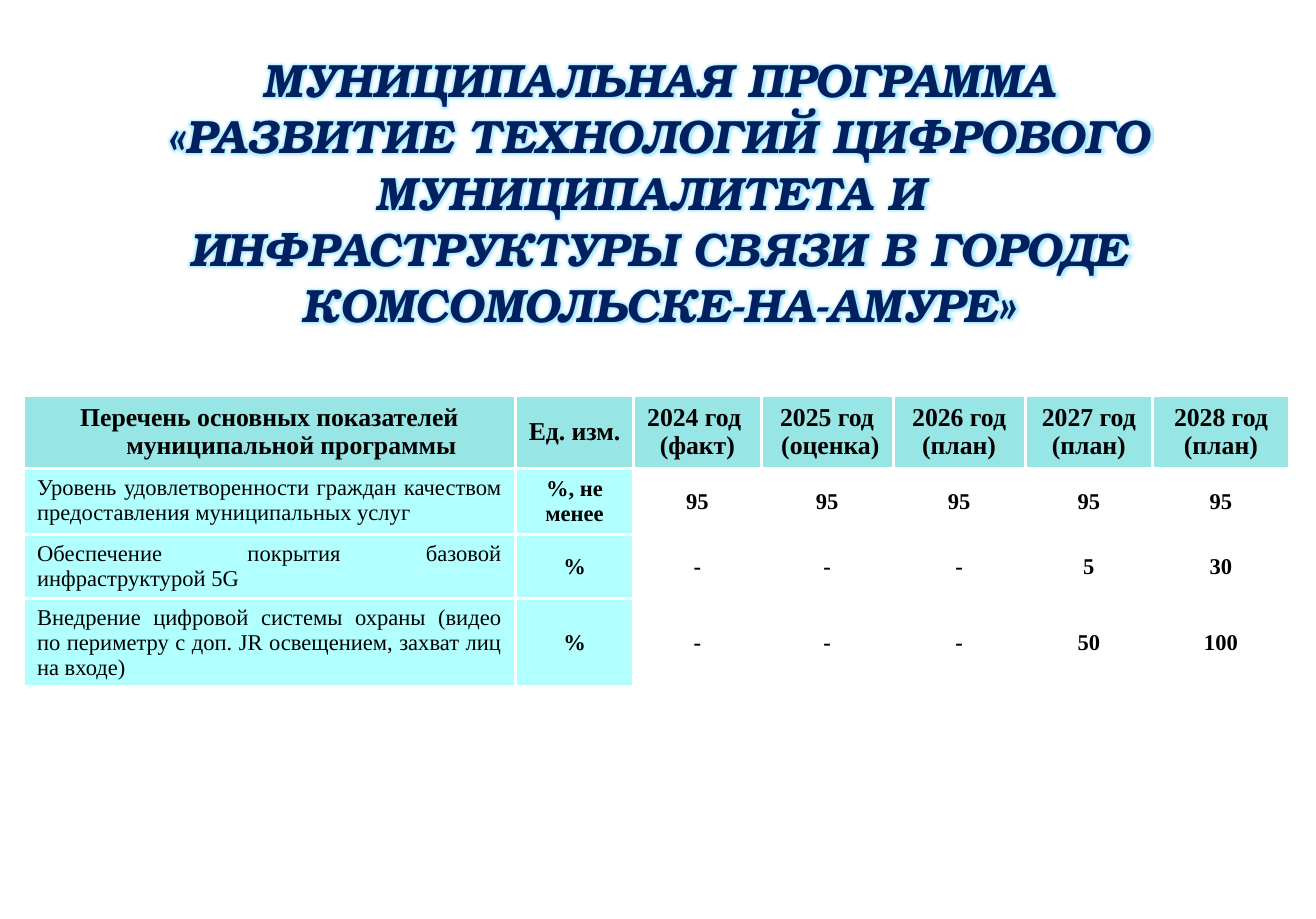
from lxml import etree
from pptx import Presentation
from pptx import util as u
from pptx.dml.color import RGBColor
from pptx.enum import text
from pptx.oxml.ns import qn

NAVY = RGBColor(0x00, 0x20, 0x60)
GLOW = RGBColor(0x33, 0xCC, 0xFF)
TEAL = RGBColor(0x33, 0xCC, 0xCC)
AQUA = RGBColor(0x66, 0xFF, 0xFF)
WHITE = RGBColor(0xFF, 0xFF, 0xFF)
BLACK = RGBColor(0x00, 0x00, 0x00)

CENTER = text.PP_ALIGN.CENTER
JUSTIFY = text.PP_ALIGN.JUSTIFY
TOP = text.MSO_ANCHOR.TOP
MIDDLE = text.MSO_ANCHOR.MIDDLE

SLIDE_SIZE = (11.36, 7.93)
TITLE_BOX = (0.09, 0.27, 11.19, 2.71)
TABLE_BOX = (0.2, 3.41, 10.93, 1.81)
COLUMNS = (4.25, 1.02, 1.1, 1.14, 1.14, 1.1, 1.18)
ROWS = (0.59, 0.56, 0.33, 0.33)
HANGING = 0.38

TITLE = (
    "МУНИЦИПАЛЬНАЯ ПРОГРАММА",
    "«РАЗВИТИЕ ТЕХНОЛОГИЙ ЦИФРОВОГО МУНИЦИПАЛИТЕТА И ",
    "ИНФРАСТРУКТУРЫ СВЯЗИ В ГОРОДЕ КОМСОМОЛЬСКЕ-НА-АМУРЕ»",
)
HEADER = (
    ("Перечень основных показателей муниципальной программы",),
    ("Ед. изм.",),
    ("2024 год ", "(факт)"),
    ("2025 год", " (оценка)"),
    ("2026 год (план)",),
    ("2027 год (план)",),
    ("2028 год (план)",),
)
INDICATORS = (
    ("Уровень удовлетворенности граждан качеством предоставления муниципальных услуг",
     "%, не менее", "95", "95", "95", "95", "95"),
    ("Обеспечение покрытия базовой инфраструктурой 5G",
     "%", "-", "-", "-", "5", "30"),
    ("Внедрение цифровой системы охраны (видео по периметру с доп. JR освещением, "
     "захват лиц на входе)",
     "%", "-", "-", "-", "50", "100"),
)


def add_color(parent, color, alpha=None):
    element = etree.SubElement(parent, qn("a:srgbClr"), val=str(color))
    if alpha is not None:
        etree.SubElement(element, qn("a:alpha"), val=str(alpha * 1000))


def write_paragraphs(frame, lines, font_name, size, color, bold, italic=False,
                     align=CENTER, hanging=0):
    for index, line in enumerate(lines):
        paragraph = frame.add_paragraph() if index else frame.paragraphs[0]
        paragraph.alignment = align
        if hanging:
            properties = paragraph._p.get_or_add_pPr()
            properties.set("marL", str(u.Inches(hanging)))
            properties.set("indent", str(-u.Inches(hanging)))
        run = paragraph.add_run()
        run.text = line
        run.font.name = font_name
        run.font.size = u.Pt(size)
        run.font.bold = bold
        run.font.italic = italic
        run.font.color.rgb = color


def set_margins(target, horizontal, vertical):
    target.margin_left = target.margin_right = u.Inches(horizontal)
    target.margin_top = target.margin_bottom = u.Inches(vertical)


def add_glow(run):
    effects = etree.Element(qn("a:effectLst"))
    glow = etree.SubElement(effects, qn("a:glow"), rad=str(u.Pt(5)))
    add_color(glow, GLOW, 40)
    run._r.get_or_add_rPr().find(qn("a:solidFill")).addnext(effects)


def draw_title(slide, box):
    shape = slide.shapes.add_textbox(*map(u.Inches, box))
    frame = shape.text_frame
    frame.word_wrap = True
    frame.vertical_anchor = text.MSO_ANCHOR.BOTTOM
    set_margins(frame, 0.12, 0.12)
    write_paragraphs(frame, TITLE, "TeX Gyre Bonum", 29, NAVY, True, italic=True)
    for paragraph in frame.paragraphs:
        for run in paragraph.runs:
            add_glow(run)


def style_cell(cell, fill, anchor, margins):
    cell.vertical_anchor = anchor
    set_margins(cell, *margins)
    if fill is None:
        cell.fill.background()
    else:
        cell.fill.solid()
        cell.fill.fore_color.rgb = fill
    properties = cell._tc.get_or_add_tcPr()
    for color in properties.iter(qn("a:srgbClr")):
        etree.SubElement(color, qn("a:alpha"), val="50000")
    for index, side in enumerate(("lnL", "lnR", "lnT", "lnB")):
        line = etree.Element(qn("a:" + side), w=str(u.Pt(2.25)))
        add_color(etree.SubElement(line, qn("a:solidFill")), WHITE)
        properties.insert(index, line)


def fill_cell(cell, lines, size, fill, bold=True, align=CENTER, hanging=0,
              anchor=MIDDLE, margins=(0.11, 0.07)):
    style_cell(cell, fill, anchor, margins)
    write_paragraphs(cell.text_frame, lines, "Times New Roman", size, BLACK, bold,
                     align=align, hanging=hanging)


def draw_indicators(slide, box):
    table = slide.shapes.add_table(len(ROWS), len(COLUMNS), *map(u.Inches, box)).table
    table.first_row = False
    table.horz_banding = False
    for column, width in zip(table.columns, COLUMNS):
        column.width = u.Inches(width)
    for row, height in zip(table.rows, ROWS):
        row.height = u.Inches(height)
    for column, lines in enumerate(HEADER):
        fill_cell(table.cell(0, column), lines, 16, TEAL,
                  hanging=HANGING if column < 2 else 0)
    for row, (name, unit, *values) in enumerate(INDICATORS, 1):
        fill_cell(table.cell(row, 0), (name,), 14, AQUA, bold=False, align=JUSTIFY,
                  anchor=TOP, margins=(0.12, 0.06))
        fill_cell(table.cell(row, 1), (unit,), 14, AQUA)
        for column, value in enumerate(values, 2):
            fill_cell(table.cell(row, column), (value,), 14, None, hanging=HANGING)


def main():
    presentation = Presentation()
    presentation.slide_width, presentation.slide_height = map(u.Inches, SLIDE_SIZE)
    slide = presentation.slides.add_slide(presentation.slide_layouts[6])
    draw_indicators(slide, TABLE_BOX)
    draw_title(slide, TITLE_BOX)
    presentation.save("out.pptx")


if __name__ == "__main__":
    main()
